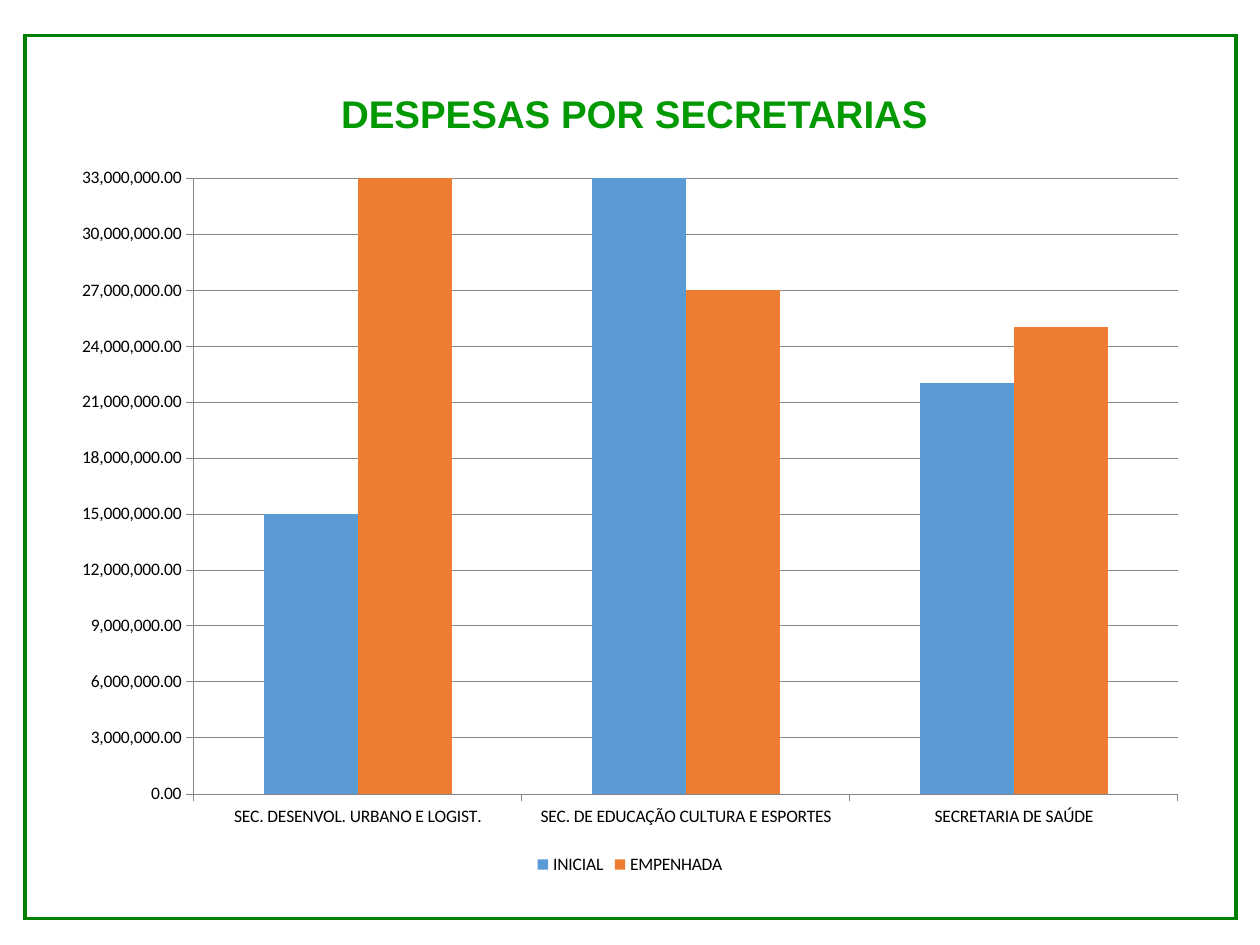
from dataclasses import dataclass

from lxml.etree import SubElement
from pptx import Presentation
from pptx.chart.data import CategoryChartData
from pptx.dml.color import RGBColor
from pptx.enum.chart import XL_CHART_TYPE, XL_LEGEND_POSITION, XL_TICK_MARK
from pptx.enum.shapes import MSO_SHAPE
from pptx.enum.text import MSO_ANCHOR, PP_ALIGN
from pptx.oxml.ns import qn
from pptx.util import Inches, Pt


@dataclass(frozen=True)
class Theme:
    frame: RGBColor = RGBColor(0x00, 0x80, 0x00)
    title: RGBColor = RGBColor(0x00, 0x99, 0x00)
    text: RGBColor = RGBColor(0x00, 0x00, 0x00)
    grid: RGBColor = RGBColor(0x87, 0x87, 0x87)
    initial: RGBColor = RGBColor(0x5B, 0x9B, 0xD5)
    committed: RGBColor = RGBColor(0xED, 0x7D, 0x31)
    title_font: str = "Arial"
    chart_font: str = "Calibri"
    title_size: Pt = Pt(22)
    chart_size: Pt = Pt(10)
    frame_width: Pt = Pt(2)
    grid_width: Pt = Pt(0.5)


THEME = Theme()
DEPARTMENTS = [
    "SEC. DESENVOL. URBANO E LOGIST.",
    "SEC. DE EDUCAÇÃO CULTURA E ESPORTES",
    "SECRETARIA DE SAÚDE",
]
EXPENSES = [
    ("INICIAL", (15_000_000, 33_000_000, 22_000_000), THEME.initial),
    ("EMPENHADA", (33_000_000, 27_000_000, 25_000_000), THEME.committed),
]


def add_frame(slide, left, top, width, height):
    shape = slide.shapes.add_shape(
        MSO_SHAPE.RECTANGLE, Inches(left), Inches(top), Inches(width), Inches(height)
    )
    shape.shadow.inherit = False
    shape.fill.background()
    shape.line.color.rgb = THEME.frame
    shape.line.width = THEME.frame_width
    outline = shape.element.spPr.find(qn("a:ln"))
    SubElement(outline, qn("a:miter")).set("lim", "800000")


def add_title(slide, text, left, top, width, height):
    shape = slide.shapes.add_textbox(
        Inches(left), Inches(top), Inches(width), Inches(height)
    )
    frame = shape.text_frame
    frame.word_wrap = True
    frame.vertical_anchor = MSO_ANCHOR.BOTTOM
    paragraph = frame.paragraphs[0]
    paragraph.alignment = PP_ALIGN.CENTER
    run = paragraph.add_run()
    run.text = text
    run.font.name = THEME.title_font
    run.font.size = THEME.title_size
    run.font.bold = True
    run.font.color.rgb = THEME.title


def style_line(line):
    line.color.rgb = THEME.grid
    line.width = THEME.grid_width


def style_axes(chart):
    for axis in (chart.category_axis, chart.value_axis):
        axis.major_tick_mark = XL_TICK_MARK.OUTSIDE
        axis.minor_tick_mark = XL_TICK_MARK.NONE
        style_line(axis.format.line)
    values = chart.value_axis
    values.minimum_scale = 0
    values.maximum_scale = 33_000_000
    values.major_unit = 3_000_000
    values.has_major_gridlines = True
    style_line(values.major_gridlines.format.line)
    values.tick_labels.number_format = "#,##0.00"
    values.tick_labels.number_format_is_linked = False


def add_expense_chart(slide, left, top, width, height):
    data = CategoryChartData(number_format="#,##0.00")
    data.categories = DEPARTMENTS
    for name, values, _ in EXPENSES:
        data.add_series(name, values)
    chart = slide.shapes.add_chart(
        XL_CHART_TYPE.COLUMN_CLUSTERED,
        Inches(left), Inches(top), Inches(width), Inches(height), data,
    ).chart
    chart.has_title = False
    chart.font.name = THEME.chart_font
    chart.font.size = THEME.chart_size
    chart.font.color.rgb = THEME.text
    chart.has_legend = True
    chart.legend.position = XL_LEGEND_POSITION.BOTTOM
    chart.legend.include_in_layout = False
    plot = chart.plots[0]
    plot.gap_width = 150
    plot.overlap = 0
    plot.vary_by_categories = False
    for series, (_, _, color) in zip(plot.series, EXPENSES):
        series.format.fill.solid()
        series.format.fill.fore_color.rgb = color
    style_axes(chart)


def main():
    """Build the slide on expenses by department."""
    presentation = Presentation()
    presentation.slide_width = Inches(10)
    presentation.slide_height = Inches(7.5)
    slide = presentation.slides.add_slide(presentation.slide_layouts[6])
    add_frame(slide, 0.2, 0.28, 9.61, 7.01)
    add_title(slide, "DESPESAS POR SECRETARIAS", 0.98, 0.36, 8.11, 0.77)
    add_expense_chart(slide, 0.47, 1.22, 9.06, 5.76)
    presentation.save("out.pptx")


if __name__ == "__main__":
    main()
